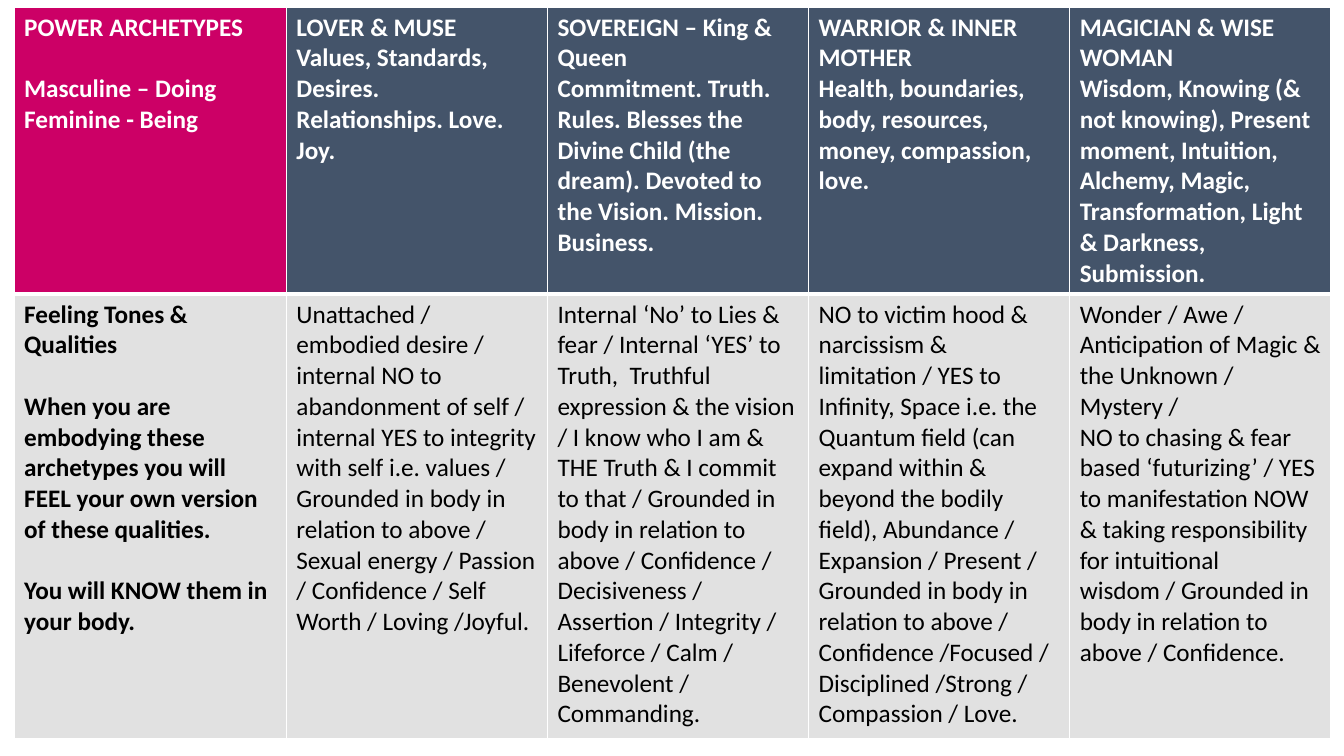
import pptx
import pptx.util
import pptx.dml.color
import pptx.oxml
import pptx.oxml.ns

Inches = pptx.util.Inches
Pt = pptx.util.Pt

COLORS = {"pink": "CC0066", "navy": "44546A", "gray": "E1E1E1",
          "white": "FFFFFF", "black": "000000"}
WIDTHS = [2.7] + [2.59] * 4
HEIGHTS = [2.83, 4.41]
GAP = Pt(22)  # one line of 18 pt text

# Each cell is a list of paragraphs
HEADS = [
    ["POWER ARCHETYPES", "Masculine – Doing", "Feminine - Being"],
    ["LOVER & MUSE", "Values, Standards, Desires.", "Relationships. Love. Joy."],
    ["SOVEREIGN – King & Queen",
     "Commitment. Truth. Rules. Blesses the Divine Child (the dream). "
     "Devoted to the Vision. Mission. Business."],
    ["WARRIOR & INNER MOTHER",
     "Health, boundaries, body, resources, money, compassion, love."],
    ["MAGICIAN & WISE WOMAN",
     "Wisdom, Knowing (& not knowing), Present moment, Intuition, Alchemy, "
     "Magic, Transformation, Light & Darkness, Submission."],
]
TONES = [
    ["Feeling Tones & Qualities",
     "When you are embodying these archetypes you will FEEL your own version "
     "of these qualities.",
     "You will KNOW them in your body."],
    ["Unattached / embodied desire / internal NO to abandonment of self / "
     "internal YES to integrity with self i.e. values /",
     "Grounded in body in relation to above / Sexual energy / Passion / "
     "Confidence / Self Worth / Loving /Joyful."],
    ["Internal ‘No’ to Lies & fear / Internal ‘YES’ to Truth,  Truthful "
     "expression & the vision / I know who I am & THE Truth & I commit to that / "
     "Grounded in body in relation to above / Confidence / Decisiveness / "
     "Assertion / Integrity / Lifeforce / Calm / Benevolent / Commanding."],
    ["NO to victim hood & narcissism & limitation / YES to Infinity, Space i.e. "
     "the Quantum field (can expand within & beyond the bodily field), "
     "Abundance / Expansion / Present / Grounded in body in relation to above / "
     "Confidence /Focused / Disciplined /Strong / Compassion / Love."],
    ["Wonder / Awe / Anticipation of Magic & the Unknown / Mystery /",
     "NO to chasing & fear based ‘futurizing’ / YES to manifestation NOW & "
     "taking responsibility for intuitional wisdom / Grounded in body in "
     "relation to above / Confidence."],
]
# Paragraphs that follow a gap, by (row, column)
GAPS = {(0, 0): [1], (1, 0): [1, 2]}


def color(name):
    return pptx.dml.color.RGBColor.from_string(COLORS[name])


def edge(cell, sides):
    """Draw white borders; sides maps L, R, T, B to points."""
    props = cell._tc.get_or_add_tcPr()
    for side, width in sides.items():
        props.append(pptx.oxml.parse_xml(
            f'<a:ln{side} {pptx.oxml.ns.nsdecls("a")} w="{Pt(width)}">'
            f'<a:solidFill><a:srgbClr val="{COLORS["white"]}"/></a:solidFill>'
            f'</a:ln{side}>'))


def write(cell, lines, gaps, ink, bold):
    style = {"name": "Calibri", "size": Pt(18), "bold": bold}
    frame = cell.text_frame
    for i, line in enumerate(lines):
        para = frame.add_paragraph() if i else frame.paragraphs[0]
        if i in gaps:
            para.space_before = GAP
        run = para.add_run()
        run.text = line
        for key, value in style.items():
            setattr(run.font, key, value)
        run.font.color.rgb = color(ink)


def grid(slide):
    table = slide.shapes.add_table(
        len(HEIGHTS), len(WIDTHS), Inches(0.14), Inches(0.07),
        Inches(sum(WIDTHS)), Inches(sum(HEIGHTS))).table
    for col, width in zip(table.columns, WIDTHS):
        col.width = Inches(width)
    for row, height in zip(table.rows, HEIGHTS):
        row.height = Inches(height)
    for r, texts in enumerate([HEADS, TONES]):
        for c, lines in enumerate(texts):
            cell = table.cell(r, c)
            head, first = r == 0, c == 0
            # A thick rule parts the two rows
            edge(cell, {"L": 1, "R": 1, "T": 1 if head else 3,
                        "B": 3 if head else 1})
            cell.fill.solid()
            fill = ("pink" if first else "navy") if head else "gray"
            cell.fill.fore_color.rgb = color(fill)
            write(cell, lines, GAPS.get((r, c), []),
                  "white" if head else "black", head or first)


def main():
    deck = pptx.Presentation()
    deck.slide_width = Inches(13.33)
    deck.slide_height = Inches(7.5)
    slide = deck.slides.add_slide(deck.slide_layouts[6])
    grid(slide)
    deck.save("out.pptx")


if __name__ == "__main__":
    main()
